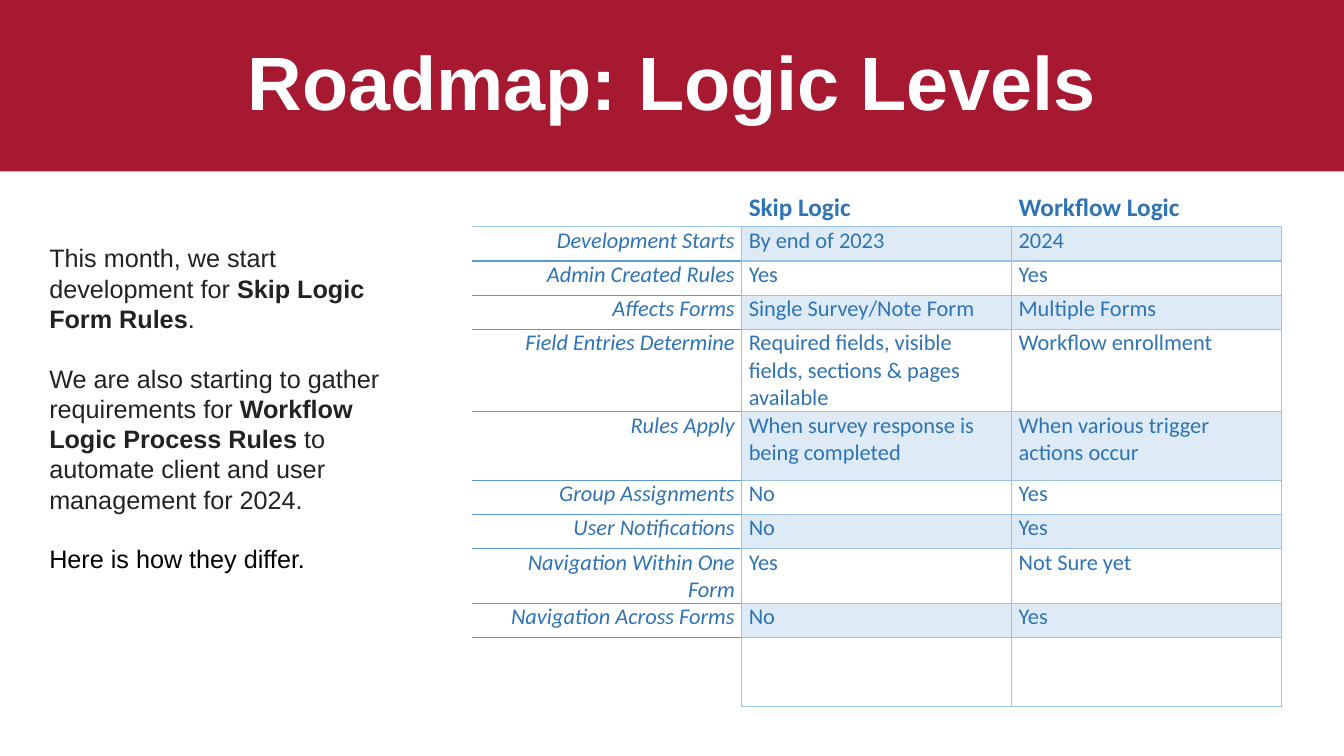
from dataclasses import dataclass

import lxml.etree
import pptx
import pptx.dml.color
import pptx.enum.text
import pptx.oxml.ns
import pptx.util

COLORS = {
    "banner": "A71930", "white": "FFFFFF", "body": "222222", "black": "000000",
    "cell": "2E74B5", "band": "DEEAF6", "grid": "9CC2E5", "rule": "5B9BD5",
}
NO_STYLE = "{2D5ABB26-0587-4C30-8999-92F81FD0307C}"
SIDES = ("L", "R", "T", "B")
COLUMN = 2.677  # width of a table column, inches
ROW = 0.34  # height of a single table row, inches


@dataclass
class Run:
    text: str
    bold: bool = False
    color: str = "body"


@dataclass
class LogicRow:
    label: str
    skip: str
    workflow: str
    height: int = 1  # in grid rows


INTRO = [
    [Run("This month, we start development for "), Run("Skip Logic Form Rules", True), Run(".")],
    [Run("We are also starting to gather requirements for "),
     Run("Workflow Logic Process Rules", True),
     Run(" to automate client and user management for 2024.")],
    [Run("Here is how they differ.", color="black")],
]

LOGIC_ROWS = [
    LogicRow("", "Skip Logic", "Workflow Logic"),
    LogicRow("Development Starts", "By end of 2023", "2024"),
    LogicRow("Admin Created Rules", "Yes", "Yes"),
    LogicRow("Affects Forms", "Single Survey/Note Form", "Multiple Forms"),
    LogicRow("Field Entries Determine",
             "Required fields, visible fields, sections & pages available",
             "Workflow enrollment", 2),
    LogicRow("Rules Apply", "When survey response is being completed",
             "When various trigger actions occur", 2),
    LogicRow("Group Assignments", "No", "Yes"),
    LogicRow("User Notifications", "No", "Yes"),
    LogicRow("Navigation Within One Form", "Yes", "Not Sure yet"),
    LogicRow("Navigation Across Forms", "No", "Yes"),
    LogicRow("", "", "", 2),
]
LAST = len(LOGIC_ROWS) - 1


def rgb(name: str) -> pptx.dml.color.RGBColor:
    return pptx.dml.color.RGBColor.from_string(COLORS[name])


def format_font(font, typeface: str, size: float, color: str,
                bold: bool = False, italic: bool = False) -> None:
    font.name, font.size = typeface, pptx.util.Pt(size)
    font.bold, font.italic = bold, italic
    font.color.rgb = rgb(color)


def place(shape, left: float, top: float, width: float, height: float) -> None:
    shape.left, shape.top = pptx.util.Inches(left), pptx.util.Inches(top)
    shape.width, shape.height = pptx.util.Inches(width), pptx.util.Inches(height)


def cell_borders(row: int, column: int) -> dict[str, str]:
    """Colour name of each drawn side of a table cell."""
    if row == 0:
        return {"B": "grid"}
    if column > 0:
        return dict.fromkeys(SIDES, "grid")
    borders = {"R": "grid", "T": "grid" if row == 1 else "rule"}
    if row < LAST:
        borders["B"] = "rule"
    return borders


def draw_borders(cell, borders: dict[str, str]) -> None:
    properties = cell._tc.get_or_add_tcPr()
    qn = pptx.oxml.ns.qn
    for side in SIDES:
        line = lxml.etree.SubElement(properties, qn(f"a:ln{side}"), w="12700")
        if side in borders:
            fill = lxml.etree.SubElement(line, qn("a:solidFill"))
            lxml.etree.SubElement(fill, qn("a:srgbClr"), val=COLORS[borders[side]])
        else:
            lxml.etree.SubElement(line, qn("a:noFill"))


def add_title(slide, width: float) -> None:
    title = slide.shapes.title
    place(title, 0, 0, width, 1.7)
    title.fill.solid()
    title.fill.fore_color.rgb = rgb("banner")
    title.text_frame.text = "Roadmap: Logic Levels"
    title.text_frame.vertical_anchor = pptx.enum.text.MSO_ANCHOR.MIDDLE
    paragraph = title.text_frame.paragraphs[0]
    paragraph.alignment = pptx.enum.text.PP_ALIGN.CENTER
    paragraph.line_spacing = 0.9
    format_font(paragraph.runs[0].font, "Arial", 54, "white", bold=True)


def add_intro(slide) -> None:
    box = slide.shapes.add_textbox(0, 0, 0, 0)
    place(box, 0.39, 2.36, 3.72, 4.04)
    frame = box.text_frame
    frame.word_wrap = True
    for index, runs in enumerate(INTRO):
        paragraph = frame.add_paragraph() if index else frame.paragraphs[0]
        if index:
            paragraph.space_before = pptx.util.Pt(21)
        for item in runs:
            run = paragraph.add_run()
            run.text = item.text
            format_font(run.font, "Arial", 18, item.color, bold=item.bold)


def add_cell(cell, text: str, row: int, column: int) -> None:
    cell.margin_left = cell.margin_right = pptx.util.Inches(0.07)
    cell.margin_top = cell.margin_bottom = 0
    draw_borders(cell, cell_borders(row, column))
    if column and row % 2 and row < LAST:
        cell.fill.solid()
        cell.fill.fore_color.rgb = rgb("band")
    else:
        cell.fill.background()
    if not text:
        return
    cell.text_frame.text = text
    paragraph = cell.text_frame.paragraphs[0]
    if column == 0:
        paragraph.alignment = pptx.enum.text.PP_ALIGN.RIGHT
    format_font(paragraph.runs[0].font, "Calibri", 16 if row else 18, "cell",
                bold=row == 0, italic=column == 0)


def add_logic_table(slide) -> None:
    frame = slide.shapes.add_table(len(LOGIC_ROWS), 3, 0, 0, 0, 0)
    place(frame, 4.68, 1.91, 3 * COLUMN, ROW * sum(row.height for row in LOGIC_ROWS))
    table = frame.table
    table.first_row = table.horz_banding = False
    table._tbl.tblPr.find(pptx.oxml.ns.qn("a:tableStyleId")).text = NO_STYLE
    for column in table.columns:
        column.width = pptx.util.Inches(COLUMN)
    for index, row in enumerate(LOGIC_ROWS):
        table.rows[index].height = pptx.util.Inches(ROW * row.height)
        for column, text in enumerate((row.label, row.skip, row.workflow)):
            add_cell(table.cell(index, column), text, index, column)


def main() -> None:
    presentation = pptx.Presentation()
    presentation.slide_width = pptx.util.Inches(13.33)
    presentation.slide_height = pptx.util.Inches(7.5)
    slide = presentation.slides.add_slide(presentation.slide_layouts[5])
    add_title(slide, 13.33)
    add_logic_table(slide)
    add_intro(slide)
    presentation.save("out.pptx")


if __name__ == "__main__":
    main()
